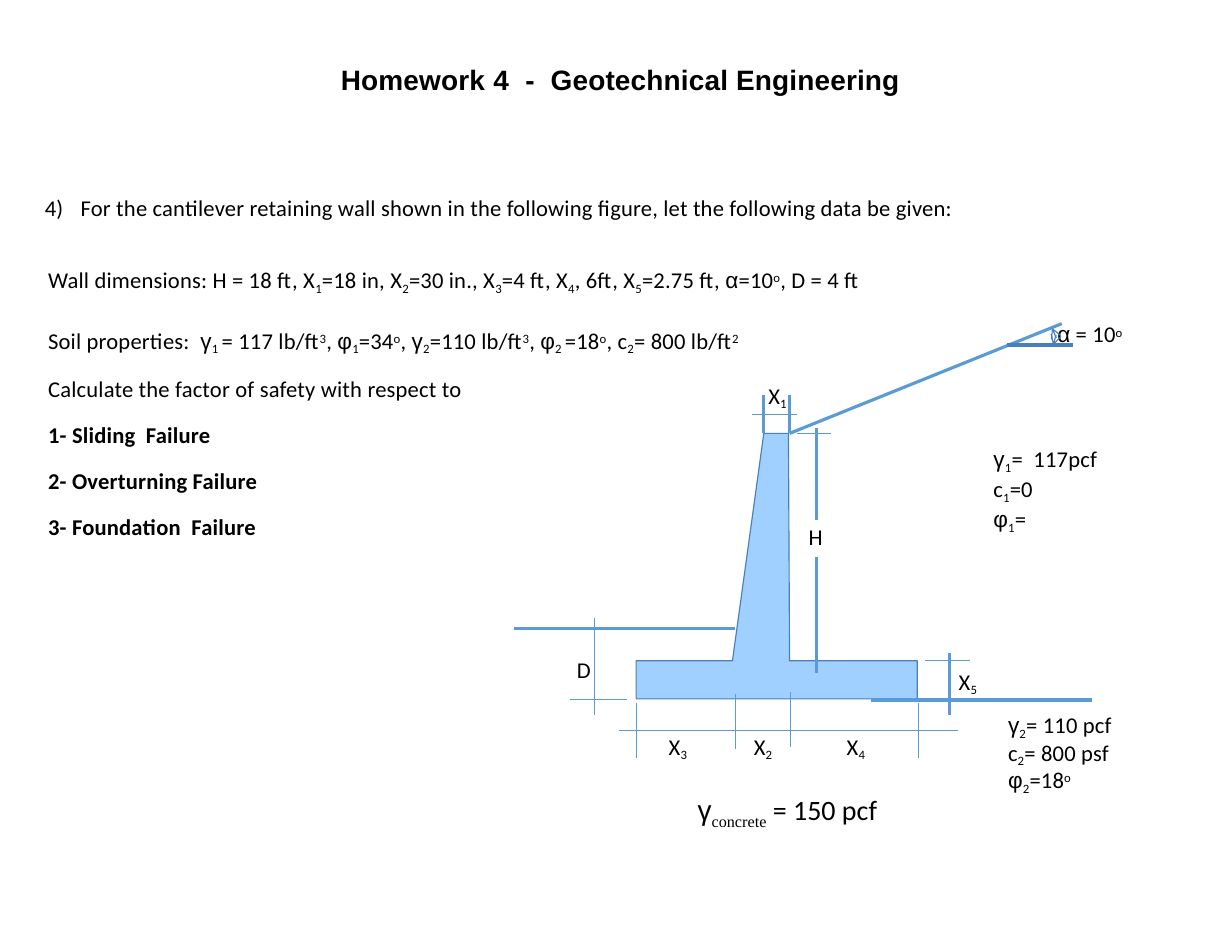
from lxml import etree
from pptx import Presentation
from pptx.dml.color import RGBColor
from pptx.enum.shapes import MSO_CONNECTOR, MSO_SHAPE
from pptx.enum.text import MSO_AUTO_SIZE, PP_ALIGN
from pptx.oxml.ns import qn
from pptx.util import Emu, Inches, Pt

STRAIGHT = MSO_CONNECTOR.STRAIGHT
ARC = MSO_SHAPE.ARC
GROW = MSO_AUTO_SIZE.SHAPE_TO_FIT_TEXT
CENTER = PP_ALIGN.CENTER
CELL = Inches(0.1)
COLS, ROWS = 110, 85
BLUE, DEEP, PALE, BLACK = "5B9BD5", "4B7EBC", "A0D0FF", "000000"
HAIR, THIN = 0, 0.42
MARKS = {"_": ("Calibri", 14.2, -20), "^": ("Calibri", 14.2, 26), "~": ("Arial", 14.5, 0)}
PLAIN = ("Calibri", 14.5, 0)


def hue(code):
    """Return the colour of a hex string."""
    return RGBColor.from_string(code)


def cells(*nums):
    """Turn grid cells into lengths."""
    return [Emu(round(n * CELL)) for n in nums]


def add_run(para, text, face, size, base=0, bold=False, track=0.1):
    """Add one run to a paragraph."""
    run = para.add_run()
    run.text = text
    font = run.font
    font.name, font.size, font.bold = face, Pt(size), bold
    font.color.rgb = hue(BLACK)
    props = run._r.get_or_add_rPr()
    props.set("spc", str(round(track * 100)))
    if base:
        props.set("baseline", str(base * 1000))


def add_frame(slide, left, top, wide, high, pad=0, wrap=True):
    """Add an empty text box and return its frame."""
    frame = slide.shapes.add_textbox(*cells(left, top, wide, high)).text_frame
    frame.word_wrap, frame.auto_size = wrap, GROW
    frame.margin_left = frame.margin_right = Inches(pad)
    frame.margin_top = frame.margin_bottom = Inches(pad / 2)
    return frame


def fill_para(para, text, gap=0, lead=None, bold=False):
    """Write bar-split runs, where a leading mark sets the style."""
    para._p.get_or_add_pPr().set("marL", str(Inches(0.01)))
    para.space_before = Pt(gap)
    if lead:
        para.line_spacing = lead
    for part in text.split("|"):
        style = MARKS.get(part[0])
        add_run(para, part[1:] if style else part, *(style or PLAIN), bold=bold)


def label(slide, text, left, top, wide, high=2.4):
    """Add a one-line label."""
    frame = add_frame(slide, left, top, wide, high)
    fill_para(frame.paragraphs[0], text)
    return frame


def line(slide, x1, y1, x2, y2, width=HAIR, code=BLUE):
    """Draw a straight line without a shadow."""
    link = slide.shapes.add_connector(STRAIGHT, *cells(x1, y1, x2, y2))
    link.line.color.rgb, link.line.width = hue(code), Pt(width)
    etree.SubElement(link._element.spPr, qn("a:effectLst"))


def draw_title(slide, box):
    """Write the centred heading."""
    para = add_frame(slide, *box, pad=0.1).paragraphs[0]
    para.alignment = CENTER
    for text, track in (("Homework ", 0.1), ("4  ", 0.2), ("-  Geotechnical Engineering", 0.1)):
        add_run(para, text, "Arial", 18, bold=True, track=track)


def draw_task(slide, box):
    """Write the question, the data and the tasks."""
    left, top, wide, high = box
    frame = label(slide, "4)\tFor the cantilever retaining wall shown in the following figure, "
                  "let the following data be given:", left, top, wide, 2.4)
    tabs = etree.SubElement(frame.paragraphs[0]._p.pPr, qn("a:tabLst"))
    etree.SubElement(tabs, qn("a:tab"), pos=str(Inches(0.32)), algn="l")
    frame = add_frame(slide, left + 0.3, top + 3.7, wide - 6.9, high - 3.7)
    data = ("Wall dimensions: H = 18 ft, X|_1|=18 in, X|_2|=30 in., X|_3|=4 ft, X|_4|, 6ft, X|_5"
            "|=2.75 ft, |~α|=10|^o|, D = 4 ft  Soil properties:  |~γ|_1 |= 117 lb/ft|^3|, |~φ|_1"
            "|=34|^o|, |~γ|_2|=110 lb/ft|^3|, |~φ|_2 |=18|^o|, c|_2|= 800 lb/ft|^2")
    fill_para(frame.paragraphs[0], data, lead=2.05)
    fill_para(frame.add_paragraph(), "Calculate the factor of safety with respect to", 12.2)
    for text in ("1- Sliding  Failure", "2- Overturning Failure", "3- Foundation  Failure"):
        fill_para(frame.add_paragraph(), text, 12.2, bold=True)


def draw_wall(slide, box):
    """Draw the wall section with its dimension lines."""
    left, top, wide, high = box
    toe, heel = left + 10.9, left + 36
    front, face, back = left + 19.5, left + 22.3, left + 24.6
    crest, ledge, base = top + 9.8, top + 30.1, top + 33.5
    spots = [(toe, ledge), (front, ledge), (face, crest), (back - 0.1, crest),
             (back, ledge), (heel, ledge), (heel, base), (toe, base)]
    path = [tuple(cells(*spot)) for spot in spots]
    pen = slide.shapes.build_freeform(*path[0])
    pen.add_line_segments(path[1:], close=True)
    wall = pen.convert_to_shape()
    wall.shadow.inherit = False
    wall.fill.solid()
    wall.fill.fore_color.rgb = hue(PALE)
    wall.line.color.rgb, wall.line.width = hue(DEEP), Pt(HAIR)

    line(slide, back, crest, left + wide, top)
    for x in (face, back):
        line(slide, x, crest - 3.4, x, crest)
    line(slide, face - 1.1, crest - 1.7, back + 0.7, crest - 1.7, THIN)
    line(slide, back + 0.7, crest, back + 3.7, crest, THIN)
    tall = back + 2.4
    line(slide, tall, crest - 0.5, tall, crest + 7.7)
    line(slide, tall, crest + 11, tall, ledge + 1.1)
    line(slide, left, base - 6.3, front + 0.2, base - 6.3)
    line(slide, left + 5, base, toe - 0.8, base, THIN)
    line(slide, left + 7.2, base - 7.2, left + 7.2, base + 1.4, THIN)
    for x, rise in ((toe, 0.4), (front + 0.3, -0.4), (back + 0.1, -0.6), (heel + 0.1, 0.4)):
        line(slide, x, base + rise, x, base + rise + 4.9, THIN)
    line(slide, toe - 1.5, base + 2.8, heel + 3.6, base + 2.8, THIN)
    line(slide, heel - 4.1, base + 0.1, heel + 15.6, base + 0.1)
    line(slide, heel + 0.7, ledge, heel + 4.7, ledge, THIN)
    line(slide, heel + 2.9, ledge - 0.7, heel + 2.9, base + 1.4)

    label(slide, "X|_1", face + 0.3, crest - 4.6, 2.1, 3)
    label(slide, "H", tall - 0.8, crest + 8, 1.6, 2.7)
    label(slide, "D", left + 5.5, ledge - 0.4, 1.6, 2.7)
    for text, x in (("X|_3", toe + 2.8), ("X|_2", front + 1.8), ("X|_4", back + 5)):
        label(slide, text, x, base + 3, 2.1, 3)
    label(slide, "X|_5", heel + 3.6, ledge + 0.6, 2.1, 3)
    para = add_frame(slide, toe + 4.5, base + 7.9, 18.8, 4, 0.1, False).paragraphs[0]
    for text, face, drop in (("γ", "Arial", 0), ("concrete", "Times New Roman", -25),
                             (" = 150 pcf", "Calibri", 0)):
        add_run(para, text, face, 18, drop, track=0)


def draw_slope(slide, box):
    """Mark the angle of the backfill."""
    left, top, wide, high = box
    label(slide, "~α| = 10|^o", left + 4.4, top, 7.1)
    line(slide, left, top + 2.2, left + 5.9, top + 2.2, code=DEEP)
    bow = slide.shapes.add_shape(ARC, *cells(left + 2.2, top + 0.4, 2.2, 2.2))
    bow.rotation, bow.shadow.inherit = 41.5, False
    bow.fill.background()
    bow.line.color.rgb, bow.line.width = hue(DEEP), Pt(HAIR)
    for end in ("a:headEnd", "a:tailEnd"):
        etree.SubElement(bow.line._get_or_add_ln(), qn(end), type="arrow")


def draw_soil(slide, box):
    """List the properties of both soil layers."""
    left, top, wide, high = box
    frame = add_frame(slide, left, top, 10.6, 7.6)
    upper = ("~γ|_1|=  117pcf", "c|_1|=0", "~φ|_1|=")
    for i, text in enumerate(upper):
        para = frame.paragraphs[0] if i == 0 else frame.add_paragraph()
        fill_para(para, text, lead=1.02)
    lower = ("~γ|_2|= 110 pcf", "c|_2|= 800 psf", "~φ|_2|=18|^o")
    for i, text in enumerate(lower):
        label(slide, text, left + 1.3, top + 23.8 + 2.45 * i, wide - 1.3)


def main():
    """Build the slide and save it."""
    deck = Presentation()
    deck.slide_width, deck.slide_height = cells(COLS, ROWS)
    slide = deck.slides.add_slide(deck.slide_layouts[6])
    draw_title(slide, (12.5, 5.1, 85.8, 4))
    draw_task(slide, (3.9, 17.3, 81.6, 30.1))
    draw_wall(slide, (45.9, 28.9, 48.9, 45.4))
    draw_slope(slide, (89.9, 28.6, 11.5, 2.6))
    draw_soil(slide, (88.6, 39.7, 13.1, 31.1))
    deck.save("out.pptx")


if __name__ == "__main__":
    main()
